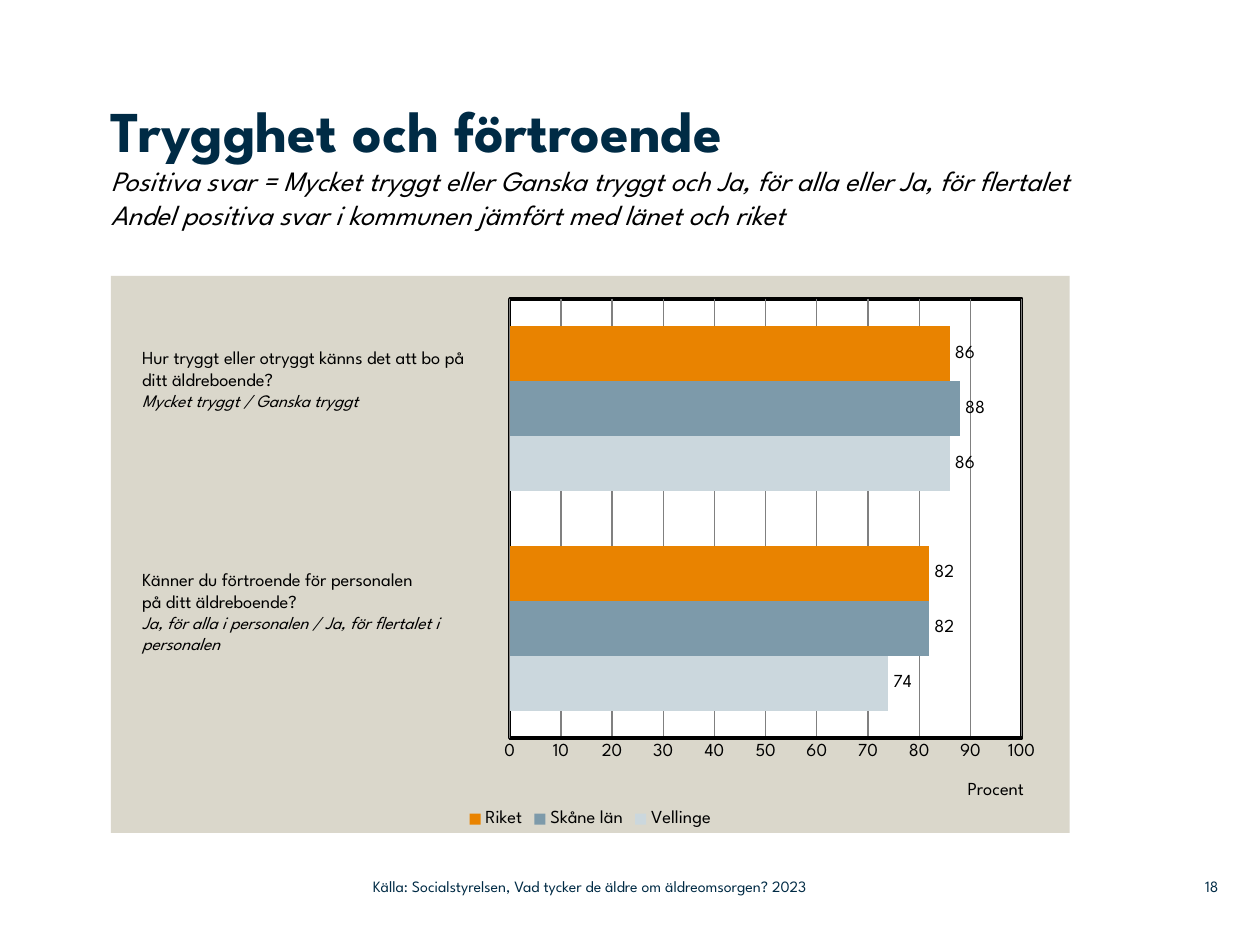
from lxml import etree
from pptx import Presentation
from pptx import util as u
from pptx.chart.data import CategoryChartData
from pptx.dml.color import RGBColor
from pptx.enum import chart as ch, text
from pptx.oxml import parse_xml
from pptx.oxml.ns import nsdecls, qn

FONT = "League Spartan"
BLACK = RGBColor(0x00, 0x00, 0x00)
NAVY = RGBColor(0x00, 0x2B, 0x45)
SAND = RGBColor(0xDA, 0xD7, 0xCB)
WHITE = RGBColor(0xFF, 0xFF, 0xFF)
GREY = RGBColor(0x80, 0x80, 0x80)
ORANGE = RGBColor(0xE9, 0x83, 0x00)
STEEL = RGBColor(0x7D, 0x9A, 0xAA)
MIST = RGBColor(0xCB, 0xD7, 0xDD)

WIDTH, HEIGHT = u.Inches(10), u.Inches(7.5)

REGIONS = [
    ("Vellinge", (74, 86), MIST),
    ("Skåne län", (82, 88), STEEL),
    ("Riket", (82, 86), ORANGE),
]


def box(left, top, width, height):
    return (int(WIDTH * left / 100), int(HEIGHT * top / 100),
            int(WIDTH * width / 100), int(HEIGHT * height / 100))


def style(font, size, color, bold=False, italic=False):
    font.name, font.size, font.bold, font.italic = FONT, u.Pt(size), bold, italic
    font.color.rgb = color


def add_run(paragraph, words, size, color, bold=False, italic=False):
    run = paragraph.add_run()
    run.text = words
    style(run.font, size, color, bold, italic)


def add_frame(slide, area, inset=True, anchor=text.MSO_ANCHOR.TOP):
    frame = slide.shapes.add_textbox(*area).text_frame
    frame.word_wrap = True
    frame.vertical_anchor = anchor
    if not inset:
        frame.margin_left = frame.margin_top = 0
        frame.margin_right = frame.margin_bottom = 0
    return frame


def add_heading(slide, area):
    heading = add_frame(slide, area, inset=False).paragraphs[0]
    add_run(heading, "Trygghet och förtroende", 33, NAVY, bold=True)
    for line in (
        "Positiva svar = Mycket tryggt eller Ganska tryggt och Ja, för alla eller Ja, för flertalet",
        "Andel positiva svar i kommunen jämfört med länet och riket",
    ):
        heading.add_line_break()
        add_run(heading, line, 16, BLACK, italic=True)


def add_question(slide, area, question, answers):
    frame = add_frame(slide, area)
    for index, line in enumerate(question):
        paragraph = frame.add_paragraph() if index else frame.paragraphs[0]
        add_run(paragraph, line, 10.5, BLACK)
    add_run(frame.add_paragraph(), answers, 10, BLACK, italic=True)


def add_footer(slide, area, words, align):
    paragraph = add_frame(slide, area, False, text.MSO_ANCHOR.MIDDLE).paragraphs[0]
    paragraph.alignment = align
    add_run(paragraph, words, 9, NAVY)


def set_layout(parent, index, **settings):
    for old in parent.findall(qn("c:layout")):
        parent.remove(old)
    layout = parse_xml(f"<c:layout {nsdecls('c')}><c:manualLayout/></c:layout>")
    for name, value in settings.items():
        etree.SubElement(layout[0], qn(f"c:{name}")).set("val", str(value))
    parent.insert(index, layout)


def area_format(fill, outline):
    return parse_xml(
        f"<c:spPr {nsdecls('c', 'a')}><a:solidFill><a:srgbClr val='{fill}'/></a:solidFill>"
        f"<a:ln w='{u.Pt(2)}'>{outline}</a:ln></c:spPr>")


def add_answer_chart(slide, area):
    data = CategoryChartData()
    data.categories = ["1", "2"]
    for region, shares, _ in REGIONS:
        data.add_series(region, shares)
    chart = slide.shapes.add_chart(ch.XL_CHART_TYPE.BAR_CLUSTERED, *area, data).chart
    chart.has_title = False
    style(chart.font, 10.5, BLACK)
    chart.has_legend = True
    chart.legend.position = ch.XL_LEGEND_POSITION.BOTTOM
    chart.legend.include_in_layout = False
    style(chart.legend.font, 10.5, BLACK)

    bars = chart.plots[0]
    bars.gap_width = 100
    bars.vary_by_categories = False
    for series, (_, _, color) in zip(bars.series, REGIONS):
        series.format.fill.solid()
        series.format.fill.fore_color.rgb = color
        labels = series.data_labels
        labels.show_value = True
        labels.position = ch.XL_LABEL_POSITION.OUTSIDE_END
        style(labels.font, 10.5, BLACK)

    chart.category_axis.visible = False
    percent = chart.value_axis
    percent.minimum_scale, percent.maximum_scale, percent.major_unit = 0, 100, 10
    percent.major_tick_mark = percent.minor_tick_mark = ch.XL_TICK_MARK.NONE
    percent.format.line.color.rgb = BLACK
    percent.format.line.width = u.Pt(2)
    percent.major_gridlines.format.line.color.rgb = GREY
    percent.major_gridlines.format.line.width = u.Pt(0.75)
    style(percent.tick_labels.font, 10.5, BLACK)
    add_run(percent.axis_title.text_frame.paragraphs[0], "Procent", 10.5, BLACK)
    set_layout(percent.axis_title._element, 1, xMode="edge", yMode="edge", x=0.89, y=0.9)

    space = chart._chartSpace
    plot_area = space.chart.plotArea
    set_layout(plot_area, 0, layoutTarget="inner", xMode="edge", yMode="edge",
               x=0.416, y=0.041, w=0.534, h=0.789)
    plot_area.append(area_format(
        WHITE, f"<a:solidFill><a:srgbClr val='{BLACK}'/></a:solidFill>"))
    space.chart.addnext(area_format(SAND, "<a:noFill/>"))


def main():
    deck = Presentation()
    deck.slide_width, deck.slide_height = WIDTH, HEIGHT
    slide = deck.slides.add_slide(deck.slide_layouts[6])
    add_answer_chart(slide, box(8.8, 29.2, 76.1, 58.93))
    add_heading(slide, box(8.8, 10, 77.5, 21.6))
    add_question(slide, box(10.3, 36, 29.8, 10.8),
                 ["Hur tryggt eller otryggt känns det att bo på ditt äldreboende?"],
                 "Mycket tryggt / Ganska tryggt")
    add_question(slide, box(10.3, 59.47, 30, 13.07),
                 ["Känner du förtroende för personalen", "på ditt äldreboende?"],
                 "Ja, för alla i personalen / Ja, för flertalet i personalen")
    add_footer(slide, box(92, 91.87, 4.7, 3.87), "18", text.PP_ALIGN.RIGHT)
    add_footer(slide, box(29.6, 91.87, 44.3, 3.87),
               "Källa: Socialstyrelsen, Vad tycker de äldre om äldreomsorgen? 2023",
               text.PP_ALIGN.LEFT)
    deck.save("out.pptx")


if __name__ == "__main__":
    main()
